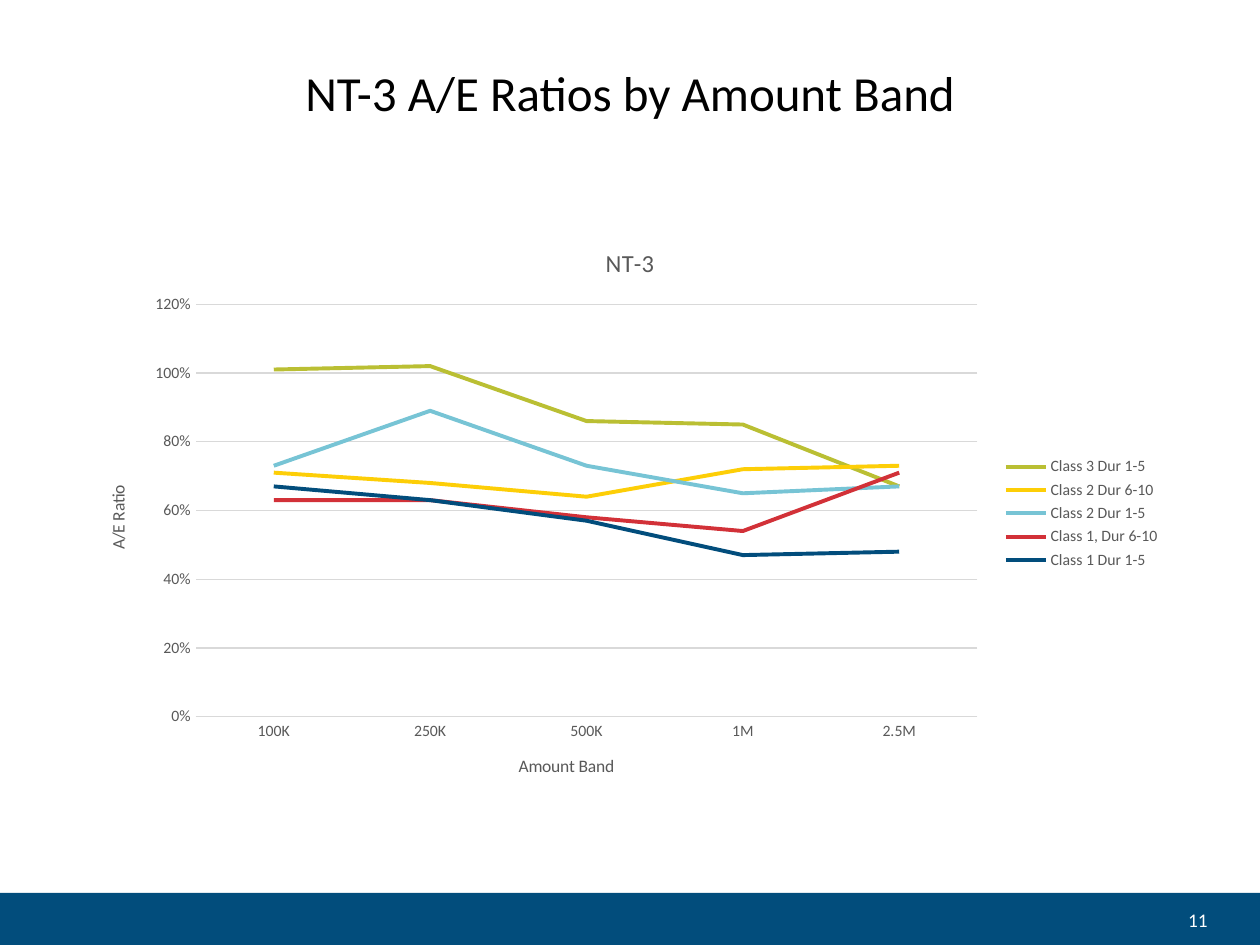
"""Build the NT-3 A/E ratios by amount band slide."""
from lxml import etree
from pptx import Presentation
from pptx.chart.data import CategoryChartData
from pptx.dml.color import RGBColor
from pptx.enum.chart import XL_CHART_TYPE, XL_LEGEND_POSITION, XL_MARKER_STYLE, XL_TICK_MARK
from pptx.enum.shapes import MSO_SHAPE
from pptx.enum.text import MSO_ANCHOR, PP_ALIGN
from pptx.oxml.ns import qn
from pptx.util import Pt

LINE = XL_CHART_TYPE.LINE
RIGHT = XL_LEGEND_POSITION.RIGHT
NO_MARKER = XL_MARKER_STYLE.NONE
NO_TICK = XL_TICK_MARK.NONE
RECT = MSO_SHAPE.RECTANGLE
MIDDLE = MSO_ANCHOR.MIDDLE

BLACK = RGBColor(0x00, 0x00, 0x00)
WHITE = RGBColor(0xFF, 0xFF, 0xFF)
GREY = RGBColor(0x59, 0x59, 0x59)
GRID = RGBColor(0xD9, 0xD9, 0xD9)
NAVY = RGBColor(0x02, 0x4D, 0x7C)
OLIVE = RGBColor(0xBA, 0xBF, 0x33)
YELLOW = RGBColor(0xFD, 0xCE, 0x07)
SKY = RGBColor(0x77, 0xC4, 0xD5)
RED = RGBColor(0xD2, 0x31, 0x38)

FONT = "Calibri"
BANDS = ["100K", "250K", "500K", "1M", "2.5M"]
SERIES = [
    ("Class 3 Dur 1-5", OLIVE, [1.01, 1.02, 0.86, 0.85, 0.67]),
    ("Class 2 Dur 6-10", YELLOW, [0.71, 0.68, 0.64, 0.72, 0.73]),
    ("Class 2 Dur 1-5", SKY, [0.73, 0.89, 0.73, 0.65, 0.67]),
    ("Class 1, Dur 6-10", RED, [0.63, 0.63, 0.58, 0.54, 0.71]),
    ("Class 1 Dur 1-5", NAVY, [0.67, 0.63, 0.57, 0.47, 0.48]),
]
PLOT_LAYOUT = {"layoutTarget": "inner", "xMode": "edge", "yMode": "edge",
               "x": 0.1, "y": 0.14, "w": 0.72, "h": 0.71}


def px(*lengths):
    return [round(n * 914400 / 126) for n in lengths]


def style(font, size, color, bold=False):
    font.name = FONT
    font.size = Pt(size)
    font.bold = bold
    font.color.rgb = color


prs = Presentation()
prs.slide_width, prs.slide_height = px(1260, 945)
slide = prs.slides.add_slide(prs.slide_layouts[5])

bar = slide.shapes.add_shape(RECT, *px(0, 893, 1260, 52))
bar.shadow.inherit = False
bar.fill.solid()
bar.fill.fore_color.rgb = NAVY
bar.line.fill.background()

title = slide.shapes.title
title.left, title.top, title.width, title.height = px(87, 45, 1086, 102)
tf = title.text_frame
tf.text = "NT-3 A/E Ratios by Amount Band"
tf.vertical_anchor = MIDDLE
p = tf.paragraphs[0]
p.alignment = PP_ALIGN.CENTER
p.line_spacing = 0.9
style(p.runs[0].font, 28, BLACK)

data = CategoryChartData(number_format="0%")
data.categories = BANDS
for name, color, ratios in SERIES:
    data.add_series(name, ratios)
chart = slide.shapes.add_chart(LINE, *px(87, 223, 1086, 581), data).chart
style(chart.font, 10, BLACK)

cat_axis, val_axis = chart.category_axis, chart.value_axis
for owner, text, size in [(chart, "NT-3", 14), (cat_axis, "Amount Band", 10),
                          (val_axis, "A/E Ratio", 10)]:
    heading = owner.chart_title if owner is chart else owner.axis_title
    heading.text_frame.text = text
    style(heading.text_frame.paragraphs[0].runs[0].font, size, GREY)
chart.chart_title.include_in_layout = False

for axis in (cat_axis, val_axis):
    axis.major_tick_mark = axis.minor_tick_mark = NO_TICK
    style(axis.tick_labels.font, 9, GREY)
val_axis.minimum_scale = 0
val_axis.maximum_scale = 1.2
val_axis.major_unit = 0.2
val_axis.tick_labels.number_format = "0%"
val_axis.tick_labels.number_format_is_linked = False
val_axis.format.line.fill.background()
for line in (cat_axis.format.line, val_axis.major_gridlines.format.line):
    line.color.rgb = GRID
    line.width = Pt(0.75)

chart.has_legend = True
chart.legend.position = RIGHT
chart.legend.include_in_layout = False
style(chart.legend.font, 9, GREY)

plot = chart.plots[0]
plot.vary_by_categories = False
for series, (name, color, ratios) in zip(plot.series, SERIES):
    series.smooth = False
    series.marker.style = NO_MARKER
    series.format.line.color.rgb = color
    series.format.line.width = Pt(2.25)

plot_area = chart.element.chart.plotArea
for old in plot_area.findall(qn("c:layout")):
    plot_area.remove(old)
layout = etree.Element(qn("c:layout"))
manual = etree.SubElement(layout, qn("c:manualLayout"))
for tag, value in PLOT_LAYOUT.items():
    etree.SubElement(manual, qn(f"c:{tag}")).set("val", str(value))
plot_area.insert(0, layout)

number = slide.shapes.add_textbox(*px(1135, 895, 85, 50))
tf = number.text_frame
tf.word_wrap = True
tf.vertical_anchor = MIDDLE
tf.text = "11"
p = tf.paragraphs[0]
p.alignment = PP_ALIGN.RIGHT
style(p.runs[0].font, 11, WHITE)

prs.save("out.pptx")
